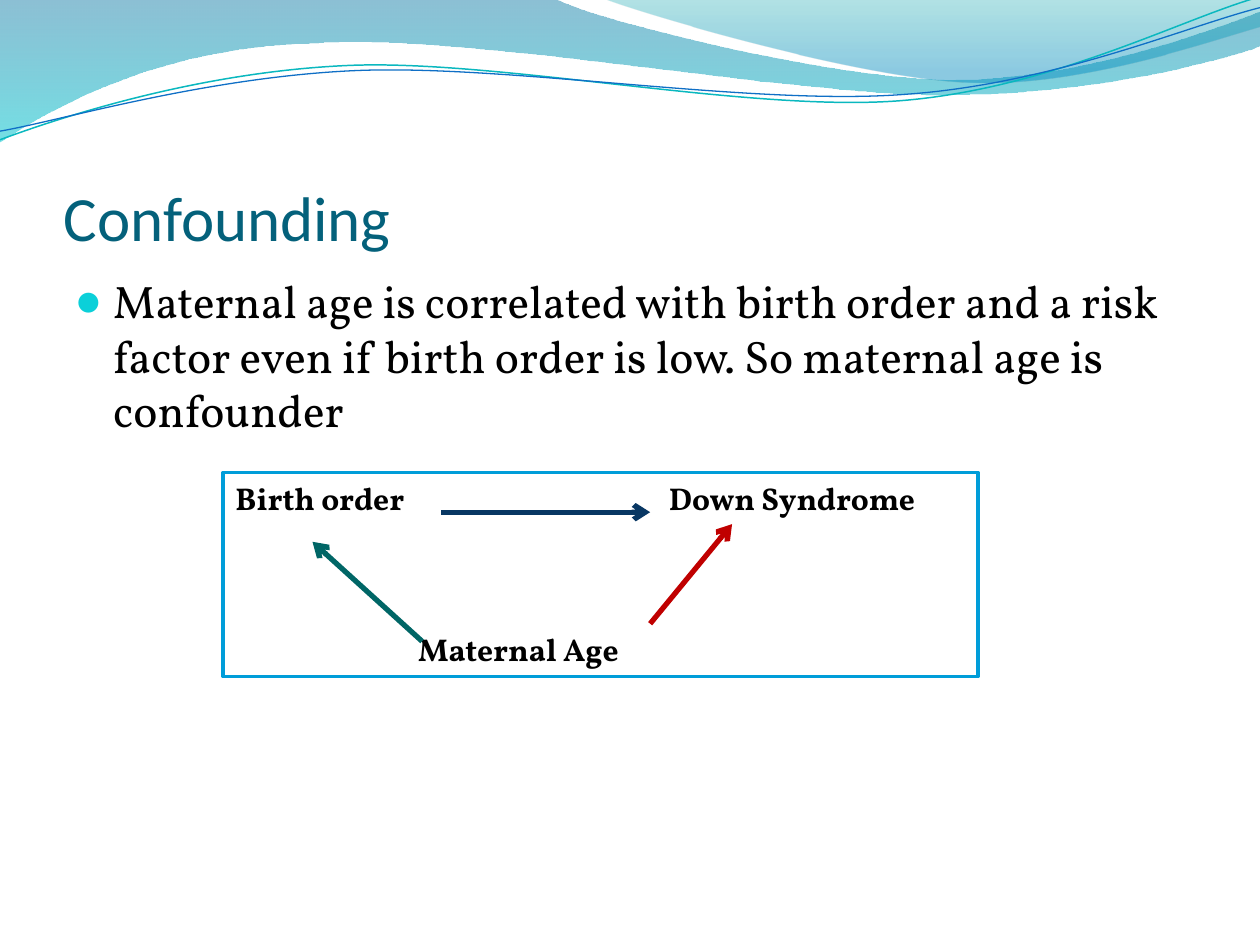
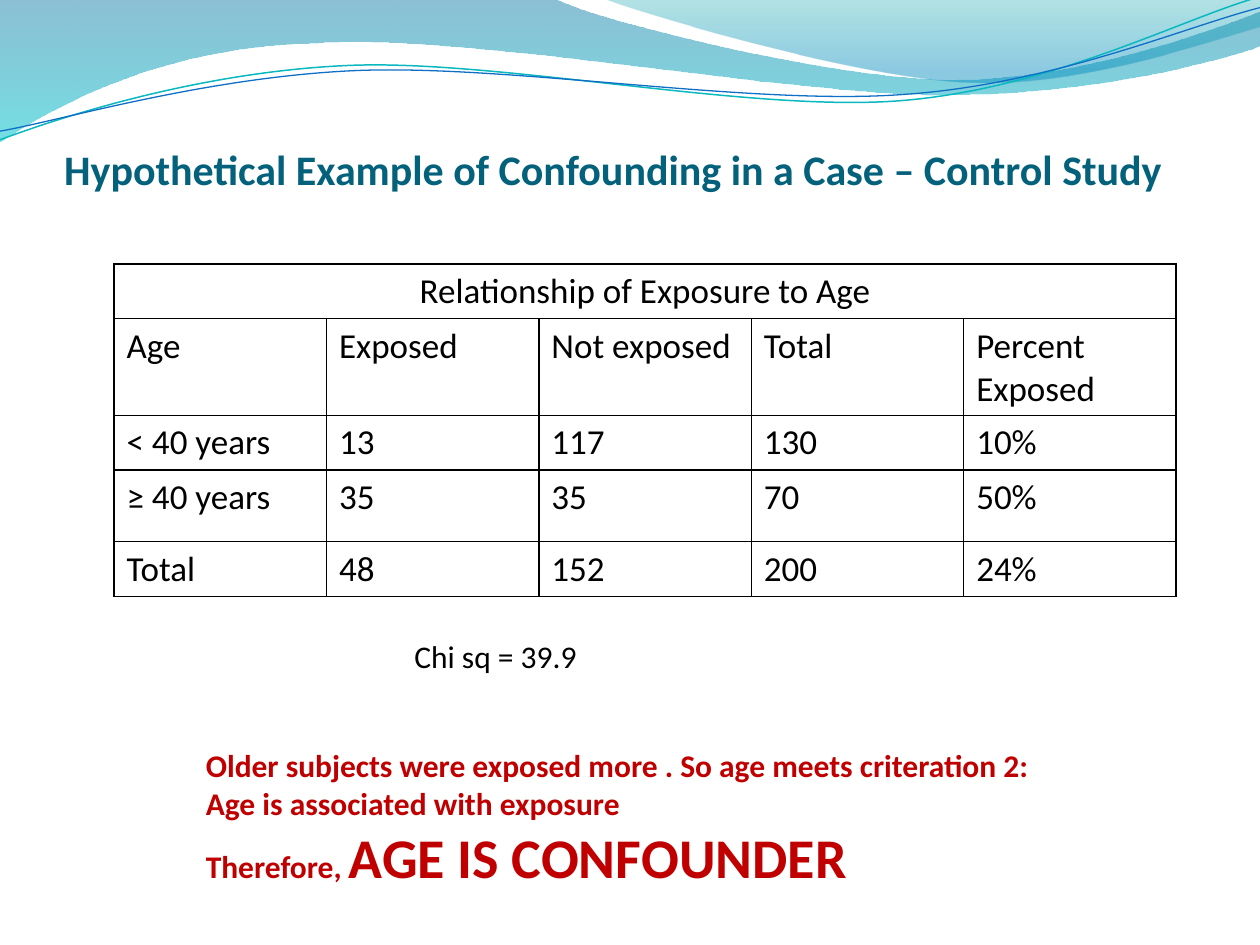
from dataclasses import dataclass

from lxml.etree import SubElement
from pptx import Presentation
from pptx.dml.color import RGBColor
from pptx.enum.shapes import MSO_CONNECTOR, MSO_SHAPE
from pptx.enum.text import MSO_ANCHOR, PP_ALIGN
from pptx.oxml.ns import qn
from pptx.util import Emu, Inches, Pt


@dataclass(frozen=True)
class Theme:
    sans: str = "Calibri"
    serif: str = "Vollkorn"
    title: str = "04617B"
    text: str = "000000"
    paper: str = "FFFFFF"
    bullet: str = "0BD0D9"
    frame: str = "009DD9"
    navy: str = "083763"
    red: str = "C00000"
    green: str = "006666"
    title_size: int = 36
    long_title_size: int = 24
    body_size: int = 26
    table_size: int = 20
    note_size: int = 18
    shout_size: int = 32


T = Theme()
WIDTH, HEIGHT = Inches(10), Inches(7.5)
CELL = WIDTH / 100  # the slide is a grid of 100 columns by 75 rows
WAVE_TILT = 357.3

# Waves are a start point followed by segments: one point is a line, three a Bezier curve.
# Filled waves add gradient stops of (position, colour, opacity).
FILLED_WAVES = [
    ((0, 0),
     [[(44, -0.1)],
      [(47.6, 1.7), (66.4, 6.3), (75.8, 6.3)],
      [(85.3, 6.3), (95.8, 2.6), (100, 0.9)],
      [(100.1, 3.6)],
      [(98.3, 4.4), (87, 7.6), (74.6, 7.5)],
      [(62.2, 7.5), (38.2, 2.8), (25.7, 3.4)],
      [(12.9, 3.6), (4.6, 8.3), (-0.1, 11.3)],
      [(0, 0)]],
     [(0, "0074A1", 45), (1, "00C6CF", 55)]),
    ((47.9, -0.1),
     [[(50.9, 1.1), (68.2, 6.2), (76.9, 6.5)],
      [(85.6, 6.9), (96.1, 3.2), (100, 2.1)],
      [(100, 0)],
      [(47.9, -0.1)]],
     [(0, "00A1A9", 30), (0.8, "008BBF", 45)]),
]
# Line waves are given level and then tilted; they add a colour and a width.
LINE_WAVES = [
    ((-0.2, 8.74),
     [[(4.68, 7.18), (15.84, 4.09), (27.75, 4.15)],
      [(39.56, 4.21), (59.14, 9.34), (71.17, 9.01)],
      [(83.2, 8.67), (93.95, 3.57), (100.02, 2.16)]],
     "0AB8BF", 0.85),
    ((-0.16, 8.05),
     [[(4.58, 7.47), (16.43, 4.52), (28.34, 4.58)],
      [(40.35, 4.65), (59.57, 8.86), (71.6, 8.52)],
      [(83.53, 8.28), (94.23, 4.18), (100.19, 2.97)]],
     "0F6FC6", 0.75),
]

EXPOSURE_TITLE = "Relationship of Exposure to Age"
EXPOSURE_ROWS = [
    ["Age", "Exposed", "Not exposed", "Total", "Percent Exposed"],
    ["< 40 years", "13", "117", "130", "10%"],
    ["≥ 40 years", "35", "35", "70", "50%"],
    ["Total", "48", "152", "200", "24%"],
]
EXPOSURE_HEIGHTS = [4.2, 4.2, 4.2, 5.7, 4.2]


def grid(*cells):
    return [Emu(round(c * CELL)) for c in cells]


def rgb(colour):
    return RGBColor.from_string(colour)


def style(r, font, size, colour, bold=False):
    r.font.name, r.font.size, r.font.bold = font, Pt(size), bold
    r.font.color.rgb = rgb(colour)


def write(tf, lines, font, size, colour, bold=False):
    tf.text = "\n".join(lines)
    for p in tf.paragraphs:
        p.alignment = PP_ALIGN.LEFT
        for r in p.runs:
            style(r, font, size, colour, bold)


def add_text(s, box, lines, font, size, colour, bold=False):
    """Add a text box at box (left, top, width, height)."""
    tf = s.shapes.add_textbox(*grid(*box)).text_frame
    tf.word_wrap = True
    write(tf, lines, font, size, colour, bold)
    return tf


def add_title(s, text, size, left, top, bold=False):
    tf = add_text(s, (left, top, 90, 12.5), [text], T.sans, size, T.title, bold)
    tf.vertical_anchor = MSO_ANCHOR.BOTTOM
    tf.margin_left = tf.margin_right = tf.margin_bottom = 0


def add_bullet(p, indent):
    pPr = p._p.get_or_add_pPr()
    width, = grid(indent)
    pPr.set("marL", str(width))
    pPr.set("indent", str(-width))
    SubElement(SubElement(pPr, qn("a:buClr")), qn("a:srgbClr"), val=T.bullet)
    SubElement(pPr, qn("a:buSzPct"), val="95000")
    SubElement(pPr, qn("a:buFont"), typeface=T.sans)
    SubElement(pPr, qn("a:buChar"), char="●")


def add_wave(s, start, segments, close):
    """Draw through all points, then join each three-point segment into a curve."""
    builder = s.shapes.build_freeform(*grid(*start))
    builder.add_line_segments([grid(*q) for segment in segments for q in segment], close=close)
    wave = builder.convert_to_shape()
    wave.shadow.inherit = False
    steps = iter(list(wave._element.iter(qn("a:lnTo"))))
    for segment in segments:
        first, *rest = [next(steps) for _ in segment]
        if rest:
            first.tag = qn("a:cubicBezTo")
        for step in rest:
            first.append(step[0])
            step.getparent().remove(step)
    return wave


def fill_gradient(shape, stops):
    """Fill downwards with stops of (position, colour, opacity in percent)."""
    shape.fill.gradient()
    shape.fill.gradient_angle = 270
    for stop, (position, colour, opacity) in zip(shape.fill.gradient_stops, stops):
        stop.position = position
        stop.color.rgb = rgb(colour)
        SubElement(stop._gs.find(qn("a:srgbClr")), qn("a:alpha"), val=str(opacity * 1000))


def add_waves(s):
    """Draw the waves on a slide and hand them to its layout, for all slides to share."""
    for start, segments, stops in FILLED_WAVES:
        wave = add_wave(s, start, segments, True)
        fill_gradient(wave, stops)
        wave.line.fill.background()
    for start, segments, colour, weight in LINE_WAVES:
        wave = add_wave(s, start, segments, False)
        wave.rotation = WAVE_TILT
        wave.fill.background()
        wave.line.color.rgb, wave.line.width = rgb(colour), Pt(weight)
    for wave in list(s.shapes):
        s.slide_layout.shapes._spTree.append(wave._element)


def add_frame(s, box, lines):
    frame = s.shapes.add_shape(MSO_SHAPE.RECTANGLE, *grid(*box))
    frame.shadow.inherit = False
    frame.fill.solid()
    frame.fill.fore_color.rgb = rgb(T.paper)
    frame.line.color.rgb, frame.line.width = rgb(T.frame), Pt(2)
    tf = frame.text_frame
    tf.vertical_anchor = MSO_ANCHOR.TOP
    write(tf, lines, T.serif, T.note_size, T.text, True)
    return tf


def add_tab(p, position):
    tabs = SubElement(p._p.get_or_add_pPr(), qn("a:tabLst"))
    SubElement(tabs, qn("a:tab"), pos=str(grid(position)[0]), algn="l")


def add_arrow(s, start, end, colour):
    arrow = s.shapes.add_connector(MSO_CONNECTOR.STRAIGHT, *grid(*start, *end))
    arrow.line.color.rgb, arrow.line.width = rgb(colour), Pt(3)
    SubElement(arrow.line._ln, qn("a:tailEnd"), type="arrow")
    SubElement(arrow._element.spPr, qn("a:effectLst"))


def add_borders(cell):
    tcPr = cell._tc.get_or_add_tcPr()
    for i, side in enumerate(("lnL", "lnR", "lnT", "lnB")):
        ln = tcPr.makeelement(qn(f"a:{side}"), {"w": str(Pt(1))})
        SubElement(SubElement(ln, qn("a:solidFill")), qn("a:srgbClr"), val=T.text)
        tcPr.insert(i, ln)


def add_table(s, box, title, rows, heights):
    """Add a ruled table whose first row is one merged title cell."""
    columns = len(rows[0])
    frame = s.shapes.add_table(len(rows) + 1, columns, *grid(*box))
    table = frame.table
    table.first_row = table.horz_banding = False
    for row, height in zip(table.rows, grid(*heights)):
        row.height = height
    frame.height, = grid(box[-1])
    table.cell(0, 0).merge(table.cell(0, columns - 1))
    texts = [[title] + [""] * (columns - 1)] + rows
    for i, values in enumerate(texts):
        for j, value in enumerate(values):
            cell = table.cell(i, j)
            cell.fill.background()
            add_borders(cell)
            if value:
                write(cell.text_frame, [value], T.sans, T.table_size, T.text)
    table.cell(0, 0).text_frame.paragraphs[0].alignment = PP_ALIGN.CENTER


def confounding_slide(s):
    add_title(s, "Confounding", T.title_size, 5.05, 7.7)
    tf = add_text(s, (5, 21.2, 90, 48),
                  ["Maternal age is correlated with birth order and a risk factor even if "
                   "birth order is low. So maternal age is confounder"],
                  T.serif, T.body_size, T.text)
    p = tf.paragraphs[0]
    p.space_before = Pt(T.body_size * 0.2)
    add_bullet(p, 3)

    tf = add_frame(s, (17.7, 37.5, 59.9, 16.2), ["Birth order\tDown Syndrome", "Maternal Age"])
    factors, confounder = tf.paragraphs
    add_tab(factors, 34.4)
    confounder.space_before = Pt(65)
    confounder._p.get_or_add_pPr().set("marL", str(grid(14.5)[0]))
    add_arrow(s, (35, 40.65), (51.6, 40.65), T.navy)
    add_arrow(s, (51.6, 49.5), (58.1, 41.6), T.red)
    add_arrow(s, (33.5, 50.9), (24.8, 43), T.green)


def exposure_slide(s):
    add_title(s, "Hypothetical Example of Confounding in a Case – Control Study",
              T.long_title_size, 5.1, 2.85, True)
    add_table(s, (9.05, 20.95, 84.3, 26.4), EXPOSURE_TITLE, EXPOSURE_ROWS, EXPOSURE_HEIGHTS)
    add_text(s, (31.9, 50.1, 15.1, 4), ["Chi sq = 39.9"], T.sans, T.note_size, T.text)
    tf = add_text(s, (15.35, 58.75, 68.4, 12.5),
                  ["Older subjects were exposed more . So age meets criteration 2:",
                   "Age is associated with exposure",
                   "Therefore, "],
                  T.sans, T.note_size, T.red, True)
    r = tf.paragraphs[-1].add_run()
    r.text = "AGE IS CONFOUNDER"
    style(r, T.sans, T.shout_size, T.red, True)


def main():
    prs = Presentation()
    prs.slide_width, prs.slide_height = WIDTH, HEIGHT
    blank = prs.slide_layouts[6]
    first, second = [prs.slides.add_slide(blank) for _ in range(2)]
    add_waves(first)
    confounding_slide(first)
    exposure_slide(second)
    prs.save("out.pptx")


if __name__ == "__main__":
    main()
